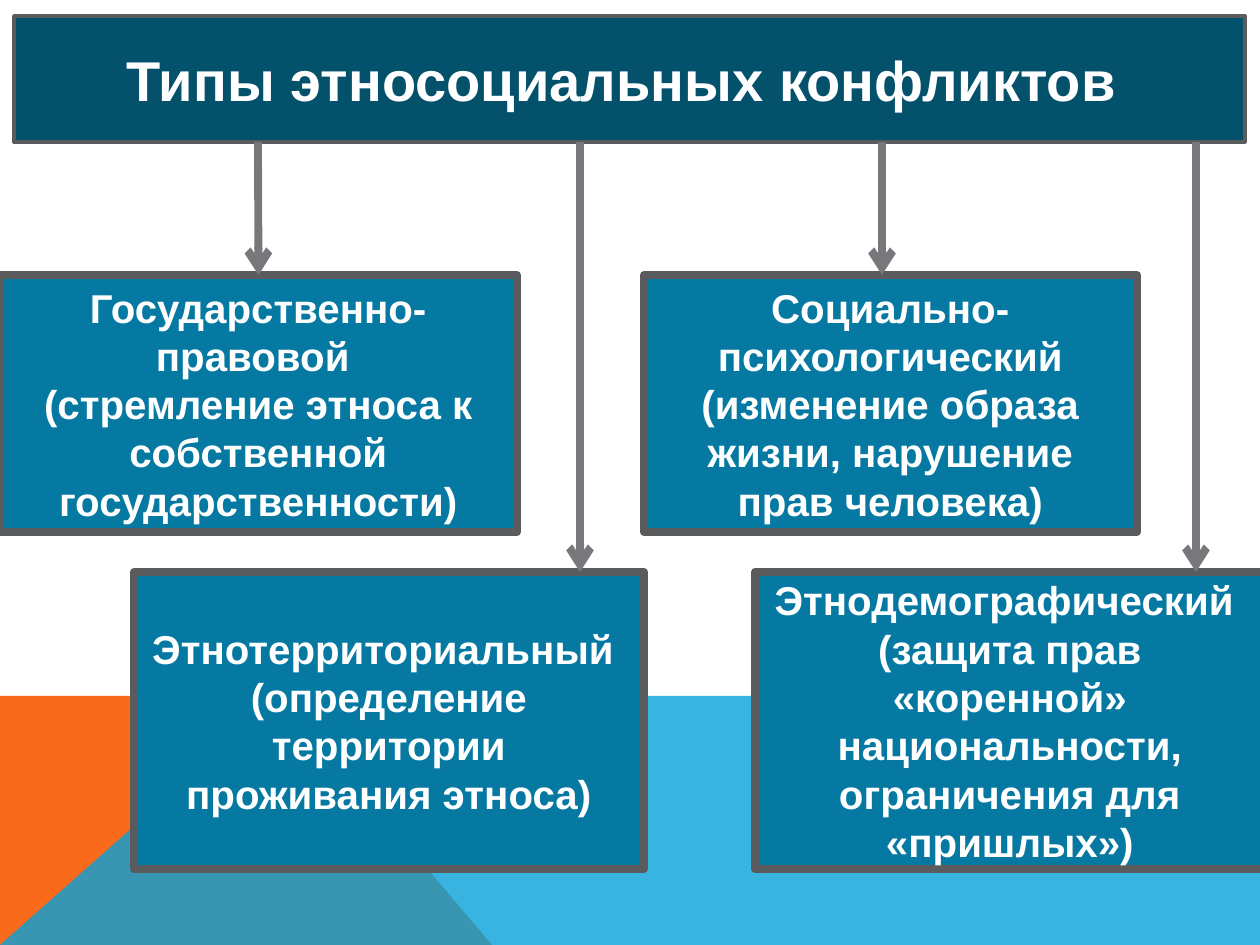
from dataclasses import dataclass
from lxml.etree import SubElement
from pptx import Presentation
from pptx.dml.color import RGBColor
from pptx.enum.shapes import MSO_CONNECTOR as Connector, MSO_SHAPE as Shape
from pptx.enum.text import MSO_ANCHOR as Anchor, PP_ALIGN as Align
from pptx.oxml.ns import qn
from pptx.util import Pt

SCALE = 914400 / 126  # EMU in one px


@dataclass(frozen=True)
class Theme:
    font: str = "Arial"
    title_size: int = 32
    type_size: int = 23
    thin: int = 2
    thick: float = 4.5
    title_fill: str = "04516C"
    type_fill: str = "0679A3"
    border: str = "5A5B5D"
    arrow: str = "76787B"
    text: str = "FFFFFF"
    orange: str = "F96A1B"
    blue: str = "08A1D9"


theme = Theme()


def px(value):
    return round(value * SCALE)


def add_box(page, frame, fill, border_width, size, lines):
    box = page.shapes.add_shape(Shape.RECTANGLE, *map(px, frame))
    box.shadow.inherit = False
    box.fill.solid()
    box.fill.fore_color.rgb = RGBColor.from_string(fill)
    box.line.color.rgb = RGBColor.from_string(theme.border)
    box.line.width = Pt(border_width)
    text = box.text_frame
    text.word_wrap = True
    text.vertical_anchor = Anchor.MIDDLE
    text.text = "\n".join(lines)
    for para in text.paragraphs:
        para.alignment = Align.CENTER
        para.font.name = theme.font
        para.font.size = Pt(size)
        para.font.bold = True
        para.font.color.rgb = RGBColor.from_string(theme.text)
    return box


deck = Presentation()
deck.slide_width, deck.slide_height = px(1260), px(945)
page = deck.slides.add_slide(deck.slide_layouts[6])

# Background shapes at the foot of the slide
backdrop = [
    (theme.orange, 100, [(0, 945), (0, 696), (281, 696), (492, 945)]),
    (theme.blue, 80, [(0, 945), (281, 696), (1260, 696), (1260, 945)]),
]
for color, opacity, points in backdrop:
    builder = page.shapes.build_freeform(*points[0], scale=SCALE)
    builder.add_line_segments(points[1:], close=True)
    area = builder.convert_to_shape()
    area.shadow.inherit = False
    area.line.fill.background()
    area.fill.solid()
    area.fill.fore_color.rgb = RGBColor.from_string(color)
    if opacity < 100:
        tone = area.fill._xPr.find(".//" + qn("a:srgbClr"))
        SubElement(tone, qn("a:alpha"), val=str(opacity * 1000))

# Title
title_bottom = 142
add_box(page, (14, 16, 1231, title_bottom - 16), theme.title_fill, theme.thin,
        theme.title_size, ["Типы этносоциальных конфликтов "])

# Conflict types: two staggered rows of (top, height)
upper, lower = (275, 257), (572, 297)
conflict_types = [  # left, width, row, arrow x, lines
    (0, 517, upper, 258, ["Государственно-правовой ",
                          "(стремление этноса к собственной государственности)"]),
    (644, 493, upper, 882, ["Социально-психологический",
                            "(изменение образа жизни, нарушение прав человека)"]),
    (134, 510, lower, 580, ["Этнотерриториальный ",
                            "(определение территории проживания этноса)"]),
    (755, 510, lower, 1196, ["Этнодемографический ",
                             "(защита прав «коренной» национальности, "
                             "ограничения для «пришлых»)"]),
]
boxes = [
    add_box(page, (left, top, width, height), theme.type_fill, theme.thick,
            theme.type_size, lines)
    for left, width, (top, height), _, lines in conflict_types
]

# Arrows from the title to each type
for box, (left, width, (top, _), x, _) in zip(boxes, conflict_types):
    arrow = page.shapes.add_connector(
        Connector.STRAIGHT, px(x), px(title_bottom), px(x), px(top))
    if abs(left + width / 2 - x) < 1:
        arrow.end_connect(box, 0)
    arrow.line.color.rgb = RGBColor.from_string(theme.arrow)
    arrow.line.width = Pt(theme.thick)
    SubElement(arrow.line._get_or_add_ln(), qn("a:tailEnd"), type="arrow")
    SubElement(arrow._element.spPr, qn("a:effectLst"))

deck.save("out.pptx")
